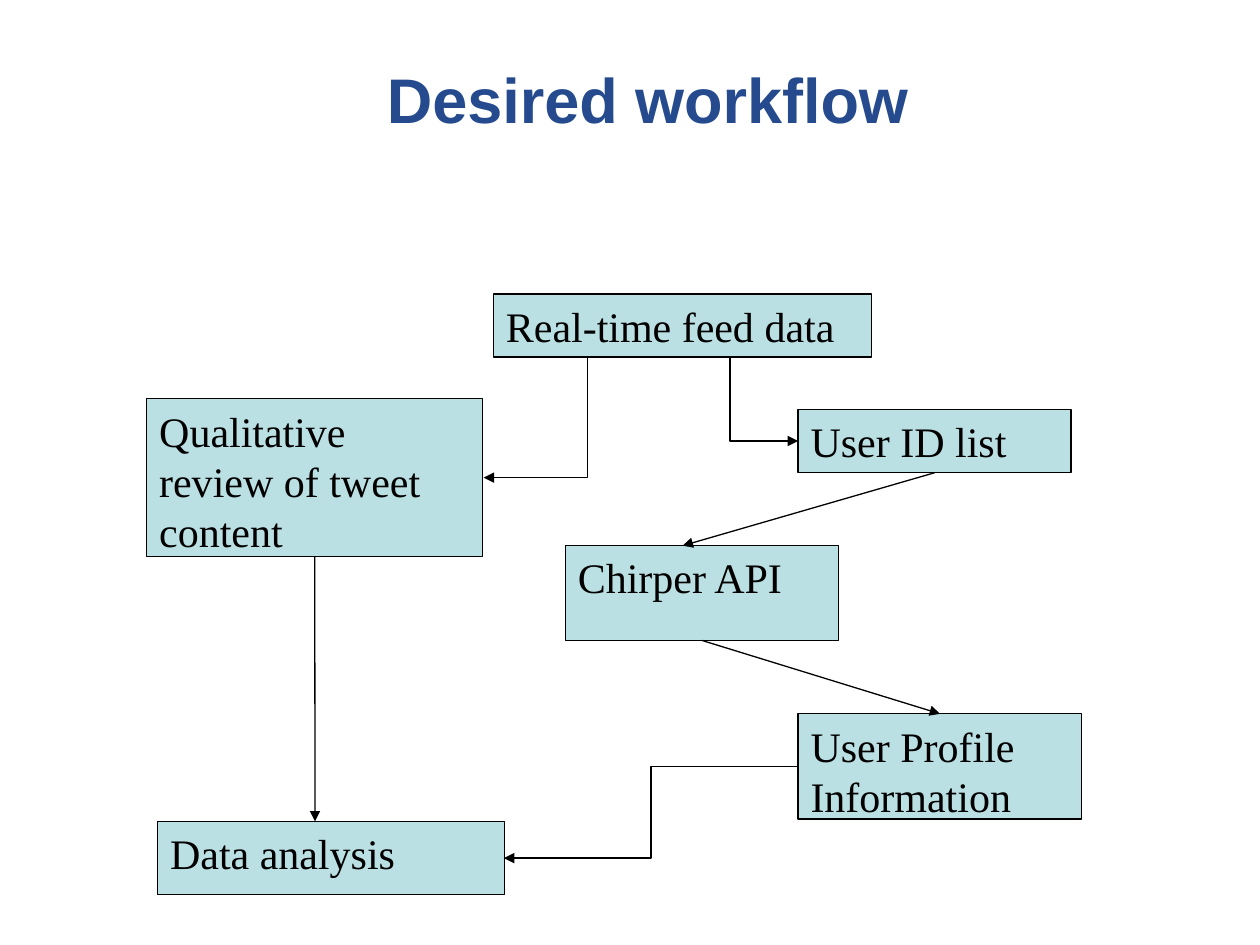
"""Builds the desired workflow slide: process boxes joined by arrows."""
from dataclasses import dataclass
from typing import Optional

from lxml import etree
from pptx import Presentation
from pptx import util as u
from pptx.dml.color import RGBColor
from pptx.enum import shapes, text
from pptx.oxml import ns

BLACK = "000000"
BOTTOM, TOP = 2, 0


@dataclass
class Box:
    label: str
    left: float
    top: float
    width: float
    height: float


@dataclass
class Arrow:
    start: tuple[float, float]
    end: tuple[float, float]
    source: Optional[str] = None
    target: Optional[str] = None


BOXES = {
    "feed": Box("Real-time feed data", 9.95, 5.93, 7.62, 1.27),
    "review": Box("Qualitative review of tweet content", 2.96, 8.04, 6.77, 3.18),
    "users": Box("User ID list", 16.09, 8.26, 5.5, 1.27),
    "api": Box("Chirper API", 11.4, 11, 5.5, 1.91),
    "profile": Box("User Profile\nInformation", 16.09, 14.39, 5.72, 2.12),
    "analysis": Box("Data analysis", 3.18, 16.56, 6.99, 1.48),
}
STRAIGHT_ARROWS = [
    Arrow((18.84, 9.53), (13.76, 11), source="users"),
    Arrow((14.15, 12.91), (18.95, 14.39), source="api", target="profile"),
    Arrow((6.35, 11.22), (6.35, 16.56), source="review"),
]
ELBOW_ARROWS = [
    Arrow((13.34, 7.2), (16.09, 8.89)),
    Arrow((16.09, 15.45), (10.16, 17.3)),
]
CORNER_ARROW = Arrow((11.85, 7.2), (9.75, 9.63))


def color(value: str) -> RGBColor:
    return RGBColor.from_string(value)


def set_font(paragraph, name: str, size: float, value: str, bold: bool = False) -> None:
    font = paragraph.font
    font.name, font.size, font.bold = name, u.Pt(size), bold
    font.color.rgb = color(value)


def add_title(slide, label: str) -> None:
    title = slide.shapes.title
    title.left, title.top = u.Cm(2.26), u.Cm(1.09)
    title.width, title.height = u.Cm(21.59), u.Cm(3.18)
    title.text_frame.text = label
    title.text_frame.vertical_anchor = text.MSO_ANCHOR.TOP
    paragraph = title.text_frame.paragraphs[0]
    paragraph.alignment = text.PP_ALIGN.CENTER
    set_font(paragraph, "Arial", 36, "254B8E", bold=True)


def add_box(slide, box: Box):
    shape = slide.shapes.add_shape(
        shapes.MSO_SHAPE.RECTANGLE,
        u.Cm(box.left), u.Cm(box.top), u.Cm(box.width), u.Cm(box.height),
    )
    shape.shadow.inherit = False
    shape.fill.solid()
    shape.fill.fore_color.rgb = color("BBE0E3")
    shape.line.color.rgb = color(BLACK)
    shape.line.width = u.Pt(0.75)
    frame = shape.text_frame
    frame.word_wrap = True
    frame.vertical_anchor = text.MSO_ANCHOR.TOP
    frame.text = box.label
    for paragraph in frame.paragraphs:
        paragraph.alignment = text.PP_ALIGN.LEFT
        set_font(paragraph, "Times New Roman", 24, BLACK)
    return shape


def add_arrow(slide, arrow: Arrow, kind=shapes.MSO_CONNECTOR.STRAIGHT):
    connector = slide.shapes.add_connector(
        kind, *(u.Cm(value) for value in (*arrow.start, *arrow.end))
    )
    connector.line.color.rgb = color(BLACK)
    connector.line.width = u.Pt(0.75)
    line = connector.line._get_or_add_ln()
    etree.SubElement(line, ns.qn("a:tailEnd"), type="triangle")
    etree.SubElement(connector._element.spPr, ns.qn("a:effectLst"))
    return connector


def add_corner_arrow(slide, arrow: Arrow) -> None:
    """Draws one bend, down and then left, as a quarter-turned elbow."""
    (start_x, start_y), (end_x, end_y) = arrow.start, arrow.end
    center_x, center_y = (start_x + end_x) / 2, (start_y + end_y) / 2
    half_width, half_height = (end_y - start_y) / 2, (start_x - end_x) / 2
    unturned = Arrow(
        (center_x - half_width, center_y - half_height),
        (center_x + half_width, center_y + half_height),
    )
    connector = add_arrow(slide, unturned, shapes.MSO_CONNECTOR.ELBOW)
    properties = connector._element.spPr
    properties.find(ns.qn("a:xfrm")).set("rot", str(90 * 60000))
    properties.find(ns.qn("a:prstGeom")).set("prst", "bentConnector2")


def main() -> None:
    presentation = Presentation()
    presentation.slide_width, presentation.slide_height = u.Cm(25.4), u.Cm(19.05)
    slide = presentation.slides.add_slide(presentation.slide_layouts[5])
    add_title(slide, "Desired workflow")
    drawn = {name: add_box(slide, box) for name, box in BOXES.items()}
    for arrow in STRAIGHT_ARROWS:
        connector = add_arrow(slide, arrow)
        if arrow.source:
            connector.begin_connect(drawn[arrow.source], BOTTOM)
        if arrow.target:
            connector.end_connect(drawn[arrow.target], TOP)
    for arrow in ELBOW_ARROWS:
        add_arrow(slide, arrow, shapes.MSO_CONNECTOR.ELBOW)
    add_corner_arrow(slide, CORNER_ARROW)
    presentation.save("out.pptx")


if __name__ == "__main__":
    main()
